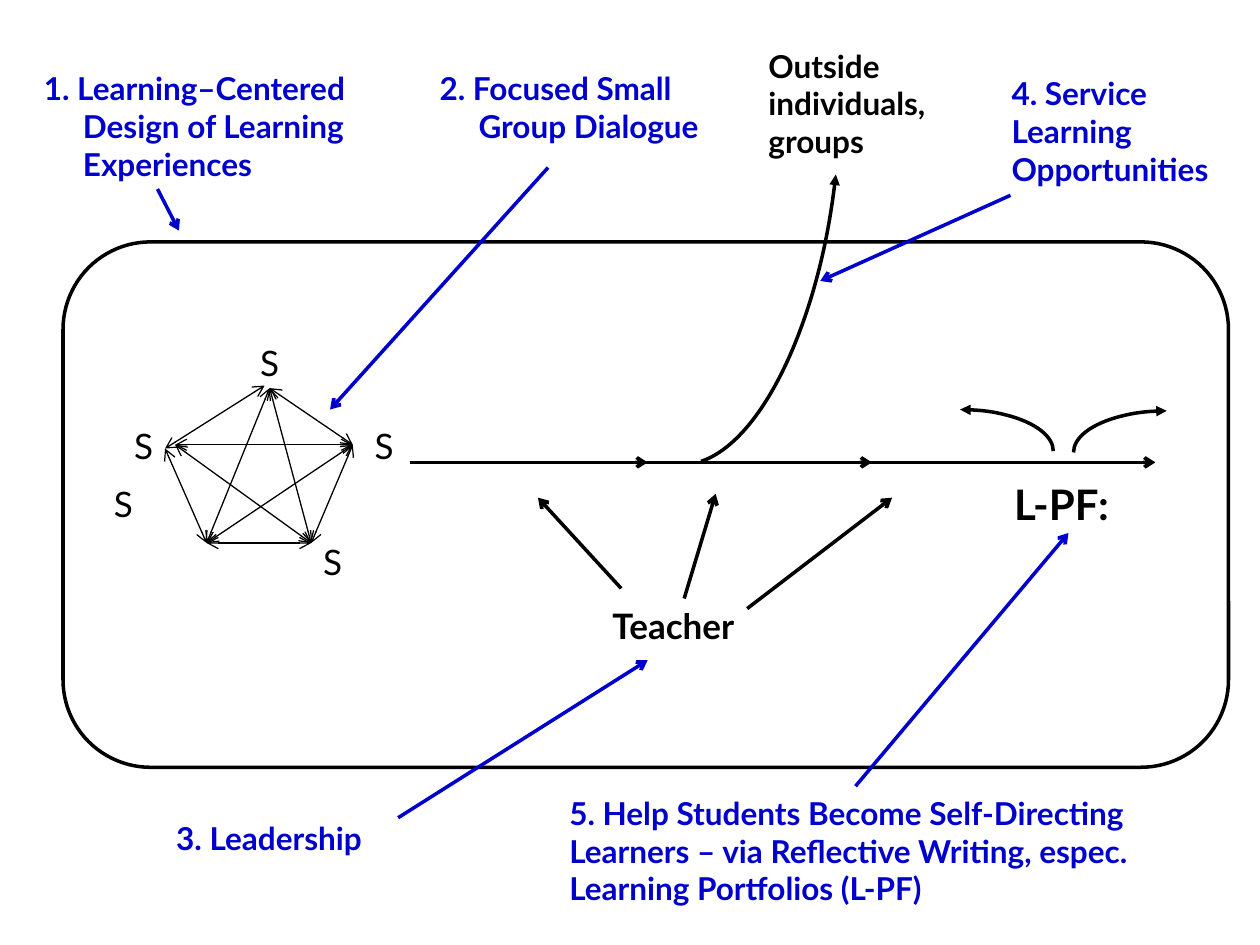
from lxml import etree
from pptx import Presentation
from pptx.dml.color import RGBColor
from pptx.enum.shapes import MSO_CONNECTOR, MSO_SHAPE
from pptx.enum.text import MSO_AUTO_SIZE, PP_ALIGN
from pptx.oxml.ns import qn
from pptx.util import Inches, Pt

BLACK = RGBColor(0x00, 0x00, 0x00)
BLUE = RGBColor(0x00, 0x00, 0xCC)
STRAIGHT = MSO_CONNECTOR.STRAIGHT
ROUNDED = MSO_SHAPE.ROUNDED_RECTANGLE
ARC = MSO_SHAPE.ARC
LEFT, CENTER = PP_ALIGN.LEFT, PP_ALIGN.CENTER
GROW = MSO_AUTO_SIZE.SHAPE_TO_FIT_TEXT


class Diagram:
    """Draws on one page in a single style."""

    def __init__(self, page, font="Lato", weight=2):
        self.page = page
        self.font = font
        self.weight = weight

    def style_line(self, line, color, weight, head=None, tail=None):
        line.color.rgb = color
        line.width = Pt(weight)
        properties = line._get_or_add_ln()
        for tag, kind in (("a:headEnd", head), ("a:tailEnd", tail)):
            if kind:
                etree.SubElement(properties, qn(tag), type=kind)

    def text(self, words, left, top, width, height, size=18, color=BLUE,
             bold=True, align=LEFT, hanging=0):
        box = self.page.shapes.add_textbox(
            Inches(left), Inches(top), Inches(width), Inches(height))
        frame = box.text_frame
        frame.word_wrap = True
        frame.auto_size = GROW
        para = frame.paragraphs[0]
        para.alignment = align
        if hanging:
            properties = para._p.get_or_add_pPr()
            properties.set("marL", str(Inches(hanging)))
            properties.set("indent", str(-Inches(hanging)))
        span = para.add_run()
        span.text = words
        span.font.name = self.font
        span.font.size = Pt(size)
        span.font.bold = bold
        span.font.color.rgb = color

    def arrow(self, start, end, color=BLACK, weight=None, head=None):
        connector = self.page.shapes.add_connector(
            STRAIGHT, *(Inches(value) for value in (*start, *end)))
        self.style_line(connector.line, color, weight or self.weight, head, "arrow")
        etree.SubElement(connector._element.spPr, qn("a:effectLst"))

    def outline(self, kind, left, top, width, height, head=None, tail=None):
        shape = self.page.shapes.add_shape(
            kind, Inches(left), Inches(top), Inches(width), Inches(height))
        shape.fill.background()
        self.style_line(shape.line, BLACK, self.weight, head, tail)
        shape.shadow.inherit = False
        return shape

    def arc(self, left, top, width, height, rotation, flip=False, **ends):
        shape = self.outline(ARC, left, top, width, height, **ends)
        shape.rotation = rotation
        if flip:
            shape._element.spPr.get_or_add_xfrm().set("flipH", "1")
        return shape


def draw_main_line(diagram):
    for start, end in ((3.25, 5.14), (5.03, 6.92), (6.33, 9.17)):
        diagram.arrow((start, 3.67), (end, 3.67))


def draw_teacher(diagram):
    diagram.text("Teacher", 4.68, 4.75, 1.33, 0.44, size=20, color=BLACK, align=CENTER)
    for start, end in (((4.93, 4.67), (4.27, 3.95)),
                       ((5.43, 4.75), (5.68, 3.92)),
                       ((5.93, 4.83), (7.08, 3.95))):
        diagram.arrow(start, end)


def draw_student_group(diagram):
    for left, top in ((0.89, 3.32), (0.73, 3.78), (2.8, 3.32), (2.39, 4.24), (1.89, 2.66)):
        diagram.text("S", left, top, 0.5, 0.44, size=20, color=BLACK,
                     bold=False, align=CENTER)
    top, right = (2.14, 3.08), (2.8, 3.53)
    low_right, low_left = (2.47, 4.31), (1.64, 4.31)
    left, inner_left = (1.31, 3.56), (1.39, 3.53)
    sides = [(left, (2.1, 3.06)), (top, right), (left, low_left),
             (low_left, low_right), (low_right, right)]
    diagonals = [(low_left, right), (inner_left, right), (low_left, top),
                 (low_right, top), (inner_left, low_right)]
    for start, end in sides + diagonals:
        diagram.arrow(start, end, weight=0.75, head="arrow")


def draw_outside_links(diagram):
    long_arc = diagram.arc(3.21, 0.27, 4.85, 2.01, 96.3, head="triangle")
    long_arc.adjustments[0] = 162
    long_arc.adjustments[1] = 213.23
    diagram.text("Outside individuals, groups", 6, 0.32, 1.75, 1.01, color=BLACK)
    diagram.arc(8.93, 2.85, 0.66, 1.48, 270, tail="triangle")
    diagram.arc(7.29, 2.84, 0.66, 1.48, 90, flip=True, tail="triangle")
    diagram.text("L-PF:", 7.95, 3.75, 1.38, 0.5, size=24, color=BLACK)


def draw_callouts(diagram):
    callouts = [
        ("1. Learning–Centered Design of Learning Experiences",
         (0.25, 0.5, 3, 1.01), 0.31, (1.25, 1.5), (1.42, 1.83)),
        ("2. Focused Small Group Dialogue",
         (3.39, 0.5, 2.52, 0.71), 0.31, (4.35, 1.33), (2.62, 3.25)),
        ("3. Leadership",
         (1.3, 6.45, 2, 0.4), 0, (3.16, 6.49), (5.14, 5.24)),
        ("4. Service Learning Opportunities",
         (7.93, 0.54, 2.04, 1.01), 0, (8.02, 1.55), (6.51, 2.23)),
        ("5. Help Students Become Self-Directing Learners – via Reflective "
         "Writing, espec. Learning Portfolios (L-PF)",
         (4.42, 6.25, 5.23, 1.01), 0, (6.79, 6.24), (8.48, 4.23)),
    ]
    for words, place, hanging, start, end in callouts:
        diagram.text(words, *place, hanging=hanging)
        diagram.arrow(start, end, color=BLUE)


def main():
    deck = Presentation()
    deck.slide_width, deck.slide_height = Inches(10), Inches(7.5)
    diagram = Diagram(deck.slides.add_slide(deck.slide_layouts[6]))
    diagram.outline(ROUNDED, 0.5, 1.92, 9.25, 4.17)
    draw_main_line(diagram)
    draw_teacher(diagram)
    draw_student_group(diagram)
    draw_outside_links(diagram)
    draw_callouts(diagram)
    deck.save("out.pptx")


if __name__ == "__main__":
    main()
